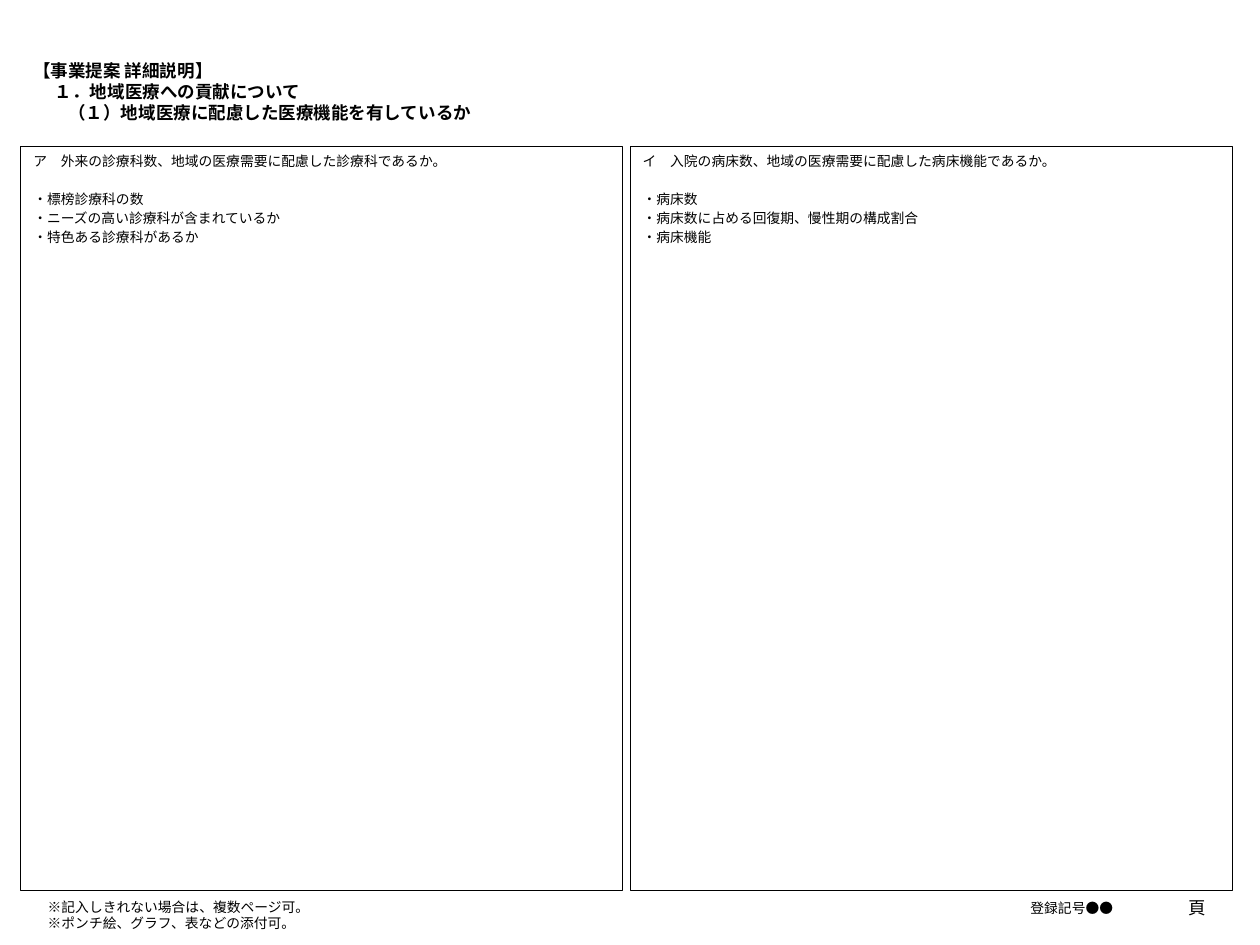
from dataclasses import dataclass

from lxml.etree import SubElement
from pptx import Presentation
from pptx.dml.color import RGBColor
from pptx.enum.shapes import MSO_SHAPE as Shape
from pptx.enum.text import MSO_ANCHOR as Anchor, PP_ALIGN as Align
from pptx.oxml.ns import qn
from pptx.util import Inches, Pt


@dataclass(frozen=True)
class Theme:
    font: str = "Noto Sans CJK JP"
    ink: RGBColor = RGBColor(0, 0, 0)
    heading: float = 14
    body: float = 11
    border: float = 0.75
    heading_pitch: float = 16.8
    body_pitch: float = 13
    item_gap: float = 2.2
    list_gap: float = 17.4


def write(paragraph, text, *, theme, size, pitch, bold=False, align=Align.LEFT, before=0, indent=0):
    paragraph.alignment = align
    paragraph.line_spacing = Pt(pitch)
    paragraph.space_before = Pt(before)
    if indent:
        paragraph._p.get_or_add_pPr().set("marL", str(Inches(indent)))
    run = paragraph.add_run()
    run.text = text
    run.font.name = theme.font
    run.font.size = Pt(size)
    run.font.bold = bold
    run.font.color.rgb = theme.ink
    SubElement(run._r.get_or_add_rPr(), qn("a:ea"), typeface=theme.font)


class Sheet:
    """Draws the parts of a proposal form on one slide."""

    def __init__(self, slide, theme):
        self.slide = slide
        self.theme = theme

    def fill_frame(self, shape, lines, anchor, **style):
        frame = shape.text_frame
        frame.word_wrap = True
        frame.vertical_anchor = anchor
        frame.margin_left = frame.margin_right = Inches(0.14)
        frame.margin_top = frame.margin_bottom = Inches(0.07)
        for number, (text, extra) in enumerate(lines):
            paragraph = frame.add_paragraph() if number else frame.paragraphs[0]
            write(paragraph, text, theme=self.theme, **{**style, **extra})

    def label(self, place, lines, anchor=Anchor.MIDDLE, **style):
        box = self.slide.shapes.add_textbox(*map(Inches, place))
        self.fill_frame(box, lines, anchor, **style)

    def heading(self, place, lines):
        self.label(place, [(text, {"indent": indent}) for text, indent in lines], Anchor.TOP,
                   size=self.theme.heading, pitch=self.theme.heading_pitch, bold=True)

    def note(self, place, *texts, size=None, align=Align.LEFT):
        size = size or self.theme.body
        self.label(place, [(text, {}) for text in texts],
                   size=size, pitch=self.theme.body_pitch * size / self.theme.body, align=align)

    def answer_panel(self, place, question, points):
        theme = self.theme
        panel = self.slide.shapes.add_shape(Shape.RECTANGLE, *map(Inches, place))
        panel.shadow.inherit = False
        panel.fill.background()
        panel.line.color.rgb = theme.ink
        panel.line.width = Pt(theme.border)
        gaps = [theme.list_gap] + [theme.item_gap] * (len(points) - 1)
        lines = [(question, {})]
        lines += [(point, {"before": gap}) for point, gap in zip(points, gaps)]
        self.fill_frame(panel, lines, Anchor.TOP, size=theme.body,
                        pitch=theme.body_pitch, before=theme.item_gap)


def main():
    deck = Presentation()
    deck.slide_width, deck.slide_height = Inches(14), Inches(10.5)
    theme = Theme()
    sheet = Sheet(deck.slides.add_slide(deck.slide_layouts[6]), theme)

    sheet.heading((0.23, 0.6, 13.39, 1.1), [
        ("【事業提案 詳細説明】", 0),
        ("１．地域医療への貢献について", 0.24),
        ("（１）地域医療に配慮した医療機能を有しているか", 0.39),
    ])

    questions = {
        "ア　外来の診療科数、地域の医療需要に配慮した診療科であるか。": [
            "・標榜診療科の数",
            "・ニーズの高い診療科が含まれているか",
            "・特色ある診療科があるか",
        ],
        "イ　入院の病床数、地域の医療需要に配慮した病床機能であるか。": [
            "・病床数",
            "・病床数に占める回復期、慢性期の構成割合",
            "・病床機能",
        ],
    }
    for column, (question, points) in enumerate(questions.items()):
        sheet.answer_panel((0.23 + 6.77 * column, 1.63, 6.69, 8.27), question, points)

    sheet.note((8.08, 9.81, 4.43, 0.56), "登録記号●●", align=Align.RIGHT)
    sheet.note((0.39, 9.89, 6.93, 0.56),
               "※記入しきれない場合は、複数ページ可。", "※ポンチ絵、グラフ、表などの添付可。")
    sheet.note((12.75, 9.81, 0.79, 0.56), "頁", size=theme.heading, align=Align.RIGHT)

    deck.save("out.pptx")


if __name__ == "__main__":
    main()
